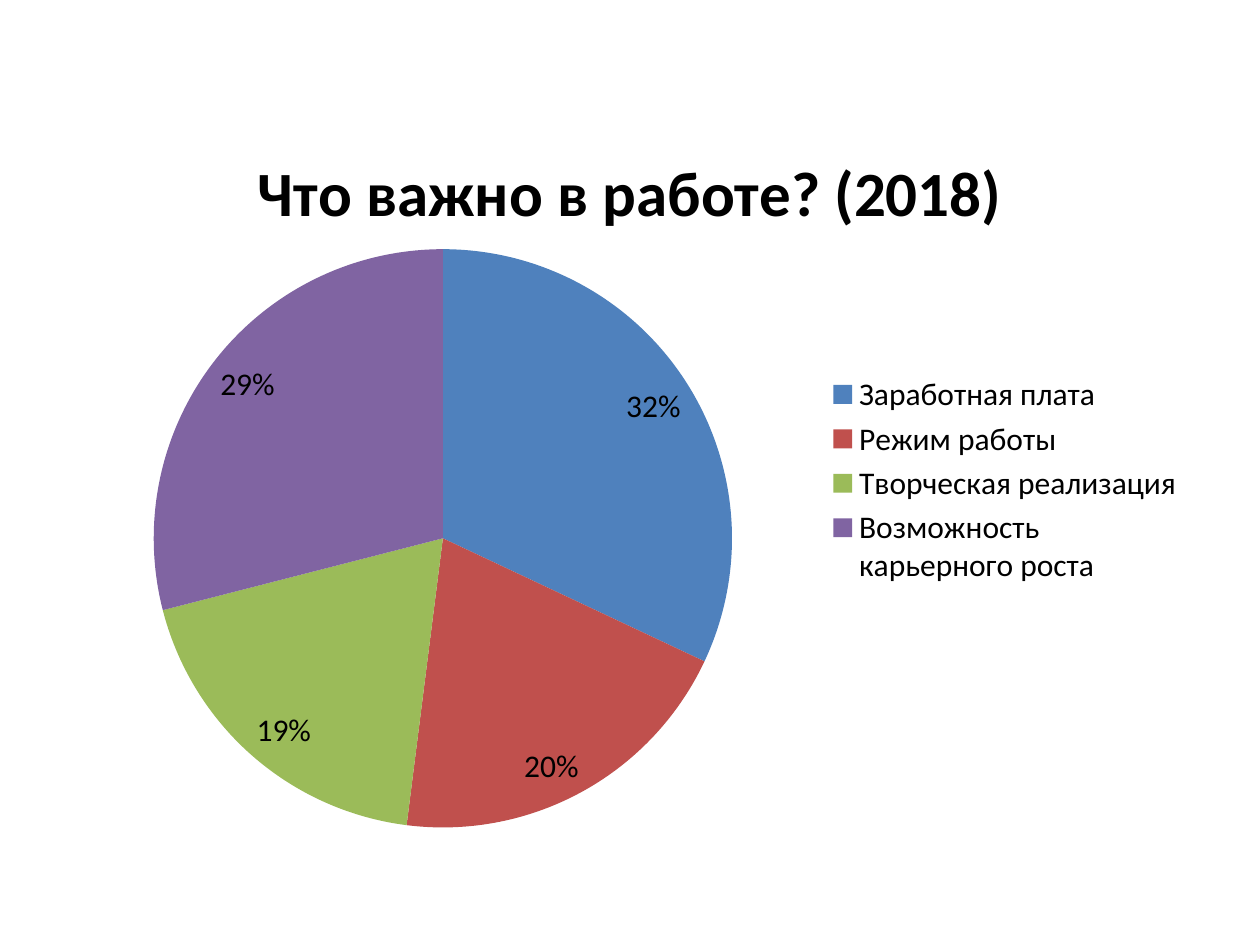
from dataclasses import dataclass

from lxml import etree
from pptx import Presentation, util as u
from pptx.chart.data import CategoryChartData
from pptx.dml.color import RGBColor
from pptx.enum import chart as ch
from pptx.oxml.ns import qn

TITLE = "Что важно в работе? (2018)"
SHARES = [  # reason, percent, slice colour
    ("Заработная плата", 32, "4F81BD"),
    ("Режим работы", 20, "C0504D"),
    ("Творческая реализация", 19, "9BBB59"),
    ("Возможность карьерного роста", 29, "8064A2"),
]
CHART_BOX = (1.27, 2.34, 22.86, 14.68)  # cm: left, top, width, height
PIE_BOX = {"x": 0.08, "y": 0.18, "w": 0.51, "h": 0.8}  # fractions of the chart


@dataclass(frozen=True)
class Theme:
    font: str = "Calibri"
    ink: str = "000000"
    title_size: int = 36
    body_size: int = 18


THEME = Theme()


def style(font, size, bold=False):
    font.name = THEME.font
    font.size = u.Pt(size)
    font.bold = bold
    font.color.rgb = RGBColor.from_string(THEME.ink)


def place_plot(chart, box):
    """Fix the inner plot area at the given fractions of the chart."""
    area = chart._chartSpace.chart.plotArea
    for old in area.findall(qn("c:layout")):
        area.remove(old)
    layout = etree.Element(qn("c:layout"))
    manual = etree.SubElement(layout, qn("c:manualLayout"))
    settings = [("layoutTarget", "inner"), ("xMode", "edge"), ("yMode", "edge")]
    for tag, val in settings + list(box.items()):
        etree.SubElement(manual, qn(f"c:{tag}")).set("val", str(val))
    area.insert(0, layout)


def add_pie(s):
    data = CategoryChartData()
    data.categories = [name for name, _, _ in SHARES]
    data.add_series("Series 1", [value for _, value, _ in SHARES])
    box = [u.Cm(v) for v in CHART_BOX]
    chart = s.shapes.add_chart(ch.XL_CHART_TYPE.PIE, *box, data).chart
    style(chart.font, THEME.body_size)

    chart.has_title = True
    chart.chart_title.include_in_layout = False
    r = chart.chart_title.text_frame.paragraphs[0].add_run()
    r.text = TITLE
    style(r.font, THEME.title_size, bold=True)

    chart.has_legend = True
    chart.legend.position = ch.XL_LEGEND_POSITION.RIGHT
    chart.legend.include_in_layout = False
    style(chart.legend.font, THEME.body_size)

    plot = chart.plots[0]
    plot.vary_by_categories = True
    for i, (_, _, colour) in enumerate(SHARES):
        fill = plot.series[0].points[i].format.fill
        fill.solid()
        fill.fore_color.rgb = RGBColor.from_string(colour)

    plot.has_data_labels = True
    labels = plot.data_labels
    labels.show_percentage = True
    labels.show_value = False
    labels.number_format = "0%"
    labels.number_format_is_linked = False
    labels.position = ch.XL_LABEL_POSITION.INSIDE_END
    style(labels.font, THEME.body_size)
    place_plot(chart, PIE_BOX)


def main():
    prs = Presentation()
    prs.slide_width, prs.slide_height = u.Cm(25.4), u.Cm(19.05)
    s = prs.slides.add_slide(prs.slide_layouts[6])
    add_pie(s)
    prs.save("out.pptx")


if __name__ == "__main__":
    main()
